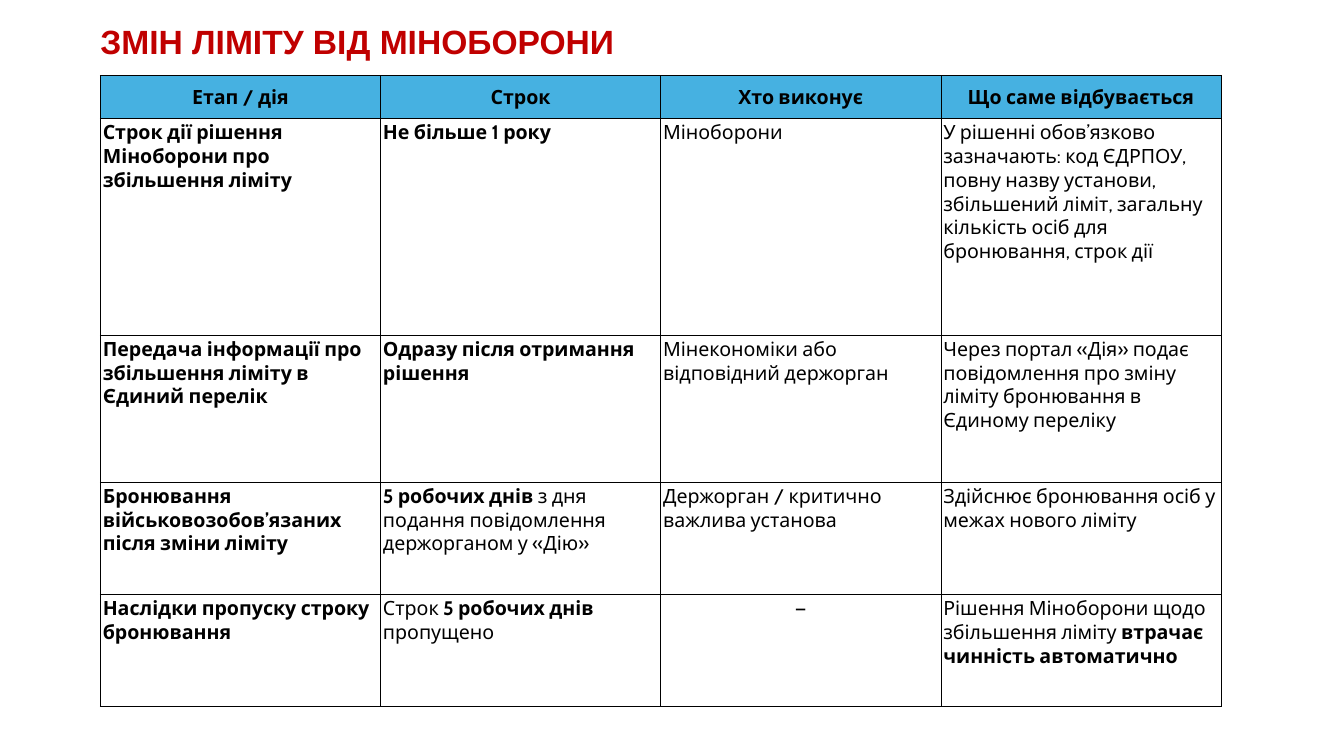
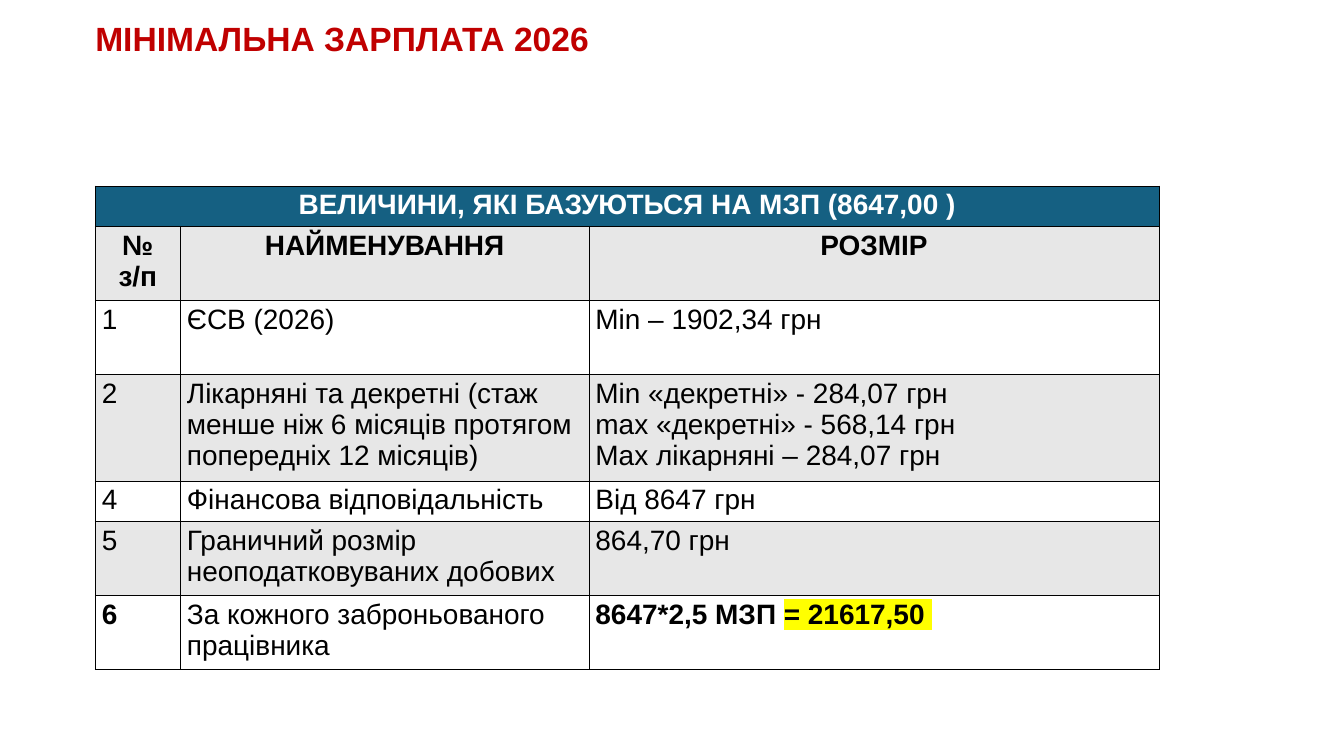
import dataclasses

import lxml.etree
import pptx
import pptx.dml.color
import pptx.enum.text
import pptx.oxml.ns
import pptx.util

SLIDE_SIZE = (26.67, 15)
TITLE_SIZE = (24.53, 1.13)


@dataclasses.dataclass(frozen=True)
class Theme:
    title_font: str = "Arial"
    title_size: int = 48
    title_color: str = "C00000"
    ink: str = "000000"
    paper: str = "FFFFFF"
    sky: str = "46B1E1"
    teal: str = "156082"
    band: str = "E7E7E7"
    marker: str = "FFFF00"
    border_width: int = 1


THEME = Theme()
ALIGN = pptx.enum.text.PP_ALIGN
ANCHOR = pptx.enum.text.MSO_ANCHOR


def bold(text):
    return [(text, {"bold": True})]


def plain(text):
    return [(text, {})]


LIMIT_SLIDE = {
    "title": "ЗМІН ЛІМІТУ ВІД МІНОБОРОНИ",
    "title_at": (1.99, 0.31),
    "table_at": (1.99, 1.5, 22.24, 12.52),
    "columns": [1, 1, 1, 1],
    "rows": [0.85, 4.3, 2.92, 2.23, 2.23],
    "fills": [THEME.sky] + [THEME.paper] * 4,
    "inks": [THEME.ink] * 5,
    "margins": (0.05, 0.05),
    "header_rows": 1,
    "header_anchor": ANCHOR.MIDDLE,
    "font": "Cabin",
    "size": 28,
    "cells": [
        [bold("Етап / дія"), bold("Строк"), bold("Хто виконує"), bold("Що саме відбувається")],
        [
            bold("Строк дії рішення Міноборони про збільшення ліміту"),
            bold("Не більше 1 року"),
            plain("Міноборони"),
            plain("У рішенні обов’язково зазначають: код ЄДРПОУ, повну назву установи, "
                  "збільшений ліміт, загальну кількість осіб для бронювання, строк дії"),
        ],
        [
            bold("Передача інформації про збільшення ліміту в Єдиний перелік"),
            bold("Одразу після отримання рішення"),
            plain("Мінекономіки або відповідний держорган"),
            plain("Через портал «Дія» подає повідомлення про зміну ліміту бронювання в Єдиному переліку"),
        ],
        [
            bold("Бронювання військовозобов’язаних після зміни ліміту"),
            bold("5 робочих днів") + plain(" з дня подання повідомлення держорганом у «Дію»"),
            plain("Держорган / критично важлива установа"),
            plain("Здійснює бронювання осіб у межах нового ліміту"),
        ],
        [
            bold("Наслідки пропуску строку бронювання"),
            plain("Строк ") + bold("5 робочих днів") + plain(" пропущено"),
            plain("—"),
            plain("Рішення Міноборони щодо збільшення ліміту ") + bold("втрачає чинність автоматично"),
        ],
    ],
}

WAGE_SLIDE = {
    "title": "МІНІМАЛЬНА ЗАРПЛАТА 2026",
    "title_at": (1.89, 0.25),
    "table_at": (1.89, 3.69, 21.11, 9.6),
    "columns": [1.69, 8.11, 11.32],
    "rows": [0.8, 1.47, 1.47, 2.12, 0.81, 1.47, 1.47],
    "fills": [THEME.teal] + [THEME.band, THEME.paper] * 3,
    "inks": [THEME.paper] + [THEME.ink] * 6,
    "margins": (0.13, 0.07),
    "header_rows": 2,
    "header_anchor": ANCHOR.TOP,
    "font": "Arial",
    "size": 40,
    "cells": [
        [bold("ВЕЛИЧИНИ, ЯКІ БАЗУЮТЬСЯ НА МЗП (8647,00 )")],
        [bold("№ з/п"), bold("НАЙМЕНУВАННЯ"), bold("РОЗМІР")],
        [plain("1"), plain("ЄСВ (2026)"), plain("Міn – 1902,34 грн")],
        [
            plain("2"),
            plain("Лікарняні та декретні (стаж менше ніж 6 місяців протягом попередніх 12 місяців)"),
            plain("Міn «декретні» - 284,07 грн\nmax «декретні» - 568,14 грн\nMax лікарняні – 284,07 грн"),
        ],
        [plain("4"), plain("Фінансова відповідальність"), plain("Від 8647 грн")],
        [plain("5"), plain("Граничний розмір неоподатковуваних добових"), plain("864,70 грн")],
        [
            bold("6"),
            plain("За кожного заброньованого працівника"),
            bold("8647*2,5 МЗП ") + [("= 21617,50 ", {"bold": True, "highlight": THEME.marker})],
        ],
    ],
}


def add_color(parent, tag, color):
    element = lxml.etree.SubElement(parent, pptx.oxml.ns.qn(tag))
    lxml.etree.SubElement(element, pptx.oxml.ns.qn("a:srgbClr"), val=color)
    return element


def add_run(paragraph, text, *, font, size, color, bold=False, highlight=None):
    run = paragraph.add_run()
    run.text = text
    run.font.name = font
    run.font.size = pptx.util.Pt(size)
    run.font.bold = bold
    run.font.color.rgb = pptx.dml.color.RGBColor.from_string(color)
    if highlight:
        properties = run.font._element
        marker = add_color(properties, "a:highlight", highlight)
        properties.find(pptx.oxml.ns.qn("a:latin")).addprevious(marker)


def write_text(frame, runs, *, align=ALIGN.LEFT, line_spacing=None, **style):
    paragraph = frame.paragraphs[0]
    paragraphs = [paragraph]
    for text, changes in runs:
        for index, line in enumerate(text.split("\n")):
            if index:
                paragraph = frame.add_paragraph()
                paragraphs.append(paragraph)
            add_run(paragraph, line, **{**style, **changes})
    for paragraph in paragraphs:
        paragraph.alignment = align
        if line_spacing:
            paragraph.line_spacing = line_spacing


def add_title(slide, text, position):
    title = slide.shapes.title
    title.left, title.top, title.width, title.height = map(pptx.util.Inches, position + TITLE_SIZE)
    frame = title.text_frame
    frame.margin_left = frame.margin_right = frame.margin_top = frame.margin_bottom = 0
    frame.word_wrap = True
    frame.auto_size = pptx.enum.text.MSO_AUTO_SIZE.NONE
    frame.vertical_anchor = ANCHOR.MIDDLE
    write_text(frame, bold(text), line_spacing=0.9, font=THEME.title_font,
               size=THEME.title_size, color=THEME.title_color)


def format_cell(cell, fill, margins):
    cell.margin_left = cell.margin_right = pptx.util.Inches(margins[0])
    cell.margin_top = cell.margin_bottom = pptx.util.Inches(margins[1])
    cell.fill.solid()
    cell.fill.fore_color.rgb = pptx.dml.color.RGBColor.from_string(fill)
    properties = cell._tc.get_or_add_tcPr()
    for index, side in enumerate(("a:lnL", "a:lnR", "a:lnT", "a:lnB")):
        line = lxml.etree.Element(pptx.oxml.ns.qn(side), w=str(pptx.util.Pt(THEME.border_width)))
        add_color(line, "a:solidFill", THEME.ink)
        properties.insert(index, line)


def set_lengths(items, name, weights, total):
    for item, weight in zip(items, weights):
        setattr(item, name, pptx.util.Inches(total * weight / sum(weights)))


def add_table(slide, content):
    left, top, width, height = content["table_at"]
    box = map(pptx.util.Inches, (left, top, width, height))
    columns, rows = content["columns"], content["rows"]
    table = slide.shapes.add_table(len(rows), len(columns), *box).table
    table.first_row = table.horz_banding = False
    set_lengths(table.columns, "width", columns, width)
    set_lengths(table.rows, "height", rows, height)
    for row_index, row in enumerate(content["cells"]):
        for cell in table.rows[row_index].cells:
            format_cell(cell, content["fills"][row_index], content["margins"])
        if len(row) == 1:
            table.cell(row_index, 0).merge(table.cell(row_index, len(columns) - 1))
        is_header = row_index < content["header_rows"]
        for column_index, runs in enumerate(row):
            cell = table.cell(row_index, column_index)
            cell.vertical_anchor = content["header_anchor"] if is_header else ANCHOR.TOP
            centred = is_header or runs == plain("—")
            write_text(cell.text_frame, runs, align=ALIGN.CENTER if centred else ALIGN.LEFT,
                       font=content["font"], size=content["size"], color=content["inks"][row_index])


def main():
    """Build the two table slides and save them."""
    presentation = pptx.Presentation()
    presentation.slide_width, presentation.slide_height = map(pptx.util.Inches, SLIDE_SIZE)
    for content in (LIMIT_SLIDE, WAGE_SLIDE):
        slide = presentation.slides.add_slide(presentation.slide_layouts[5])
        add_title(slide, content["title"], content["title_at"])
        add_table(slide, content)
    presentation.save("out.pptx")


if __name__ == "__main__":
    main()
